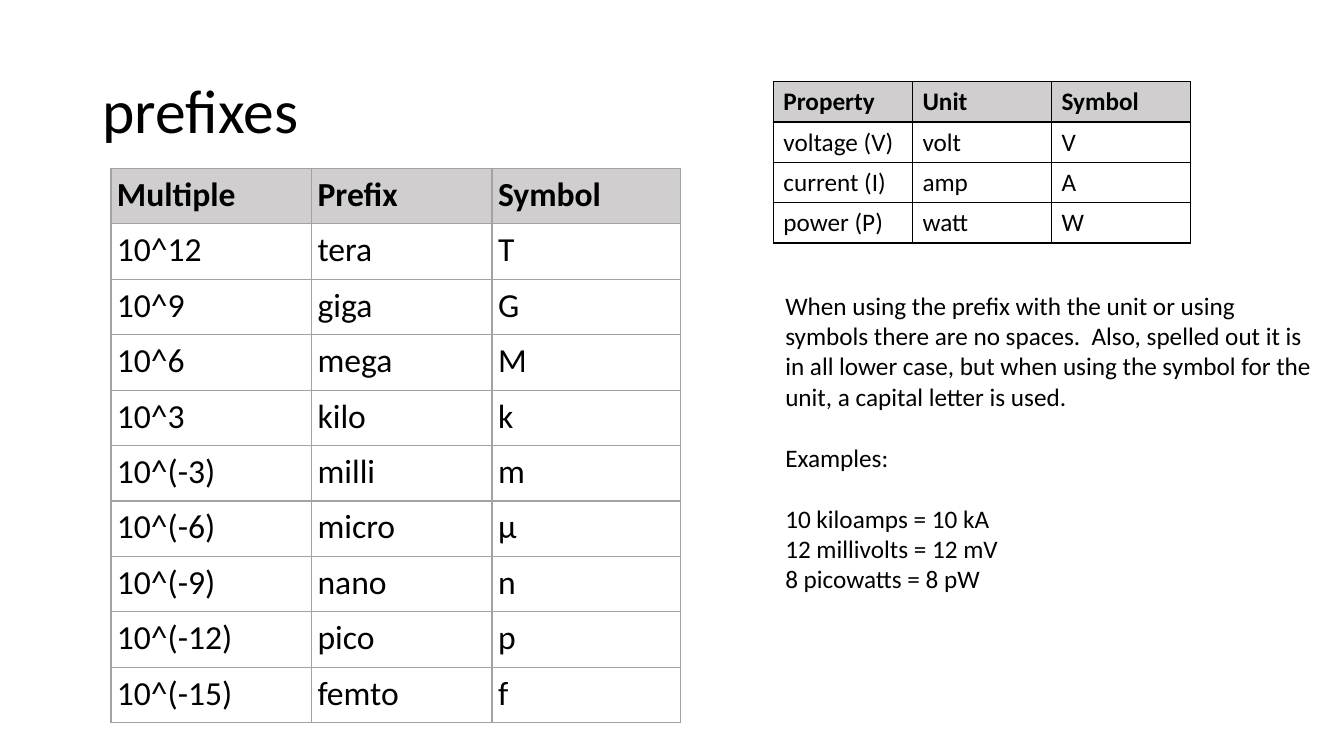
from lxml import etree
from pptx import Presentation
from pptx.dml.color import RGBColor
from pptx.enum.text import MSO_ANCHOR
from pptx.oxml.ns import qn
from pptx.util import Inches, Pt

MIDDLE = MSO_ANCHOR.MIDDLE
TOP = MSO_ANCHOR.TOP

COLORS = {"text": "000000", "header": "D0CECE", "gray": "A3A3A3", "black": "000000"}

PREFIXES = [
    ("Multiple", "Prefix", "Symbol"),
    ("10^12", "tera", "T"),
    ("10^9", "giga", "G"),
    ("10^6", "mega", "M"),
    ("10^3", "kilo", "k"),
    ("10^(-3)", "milli", "m"),
    ("10^(-6)", "micro", "µ"),
    ("10^(-9)", "nano", "n"),
    ("10^(-12)", "pico", "p"),
    ("10^(-15)", "femto", "f"),
]

UNITS = [
    ("Property", "Unit", "Symbol"),
    ("voltage (V)", "volt", "V"),
    ("current (I)", "amp", "A"),
    ("power (P)", "watt", "W"),
]

RULE = (
    "When using the prefix with the unit or using symbols there are no spaces.  "
    "Also, spelled out it is in all lower case, but when using the symbol for the "
    "unit, a capital letter is used."
)
NOTES = [
    (RULE, 22),
    ("Examples:", 22),
    ("10 kiloamps = 10 kA", 0),
    ("12 millivolts = 12 mV", 0),
    ("8 picowatts = 8 pW", 0),
]


class SlideWriter:
    """Draws text and tables on one slide in a shared style."""

    def __init__(self, page, font="Calibri"):
        self.page = page
        self.font = font

    def add_span(self, para, text, size, bold=False):
        span = para.add_run()
        span.text = text
        span.font.name = self.font
        span.font.size = Pt(size)
        span.font.bold = bold
        span.font.color.rgb = RGBColor.from_string(COLORS["text"])

    def add_text(self, left, top, width, height, lines, size, anchor=TOP, spacing=1.0):
        box = self.page.shapes.add_textbox(
            Inches(left), Inches(top), Inches(width), Inches(height)
        )
        frame = box.text_frame
        frame.word_wrap = True
        frame.vertical_anchor = anchor
        for index, (text, gap) in enumerate(lines):
            para = frame.add_paragraph() if index else frame.paragraphs[0]
            para.line_spacing = spacing
            para.space_after = Pt(gap)
            self.add_span(para, text, size)

    def add_borders(self, cell, color):
        properties = cell._tc.get_or_add_tcPr()
        for side in ("a:lnL", "a:lnR", "a:lnT", "a:lnB"):
            line = etree.SubElement(properties, qn(side), w=str(Pt(1)))
            fill = etree.SubElement(line, qn("a:solidFill"))
            etree.SubElement(fill, qn("a:srgbClr"), val=COLORS[color])

    def add_table(self, left, top, widths, row_height, rows, size, border, inset=None):
        table = self.page.shapes.add_table(
            len(rows), len(widths), Inches(left), Inches(top),
            Inches(sum(widths)), Inches(row_height * len(rows)),
        ).table
        table.first_row = False
        table.horz_banding = False
        for column, width in zip(table.columns, widths):
            column.width = Inches(width)
        for row_index, values in enumerate(rows):
            is_header = row_index == 0
            table.rows[row_index].height = Inches(row_height)
            for column_index, text in enumerate(values):
                cell = table.cell(row_index, column_index)
                if inset is not None:
                    cell.margin_left = cell.margin_right = Inches(inset)
                    cell.margin_top = cell.margin_bottom = Inches(inset)
                self.add_borders(cell, border)
                if is_header:
                    cell.fill.solid()
                    cell.fill.fore_color.rgb = RGBColor.from_string(COLORS["header"])
                else:
                    cell.fill.background()
                self.add_span(cell.text_frame.paragraphs[0], text, size, is_header)


def main():
    deck = Presentation()
    deck.slide_width = Inches(13.33)
    deck.slide_height = Inches(7.5)
    writer = SlideWriter(deck.slides.add_slide(deck.slide_layouts[6]))
    writer.add_text(0.92, 0.4, 11.5, 1.45, [("prefixes", 0)], 44, MIDDLE, 0.9)
    writer.add_table(1.1, 1.67, (1.99, 1.79, 1.87), 0.55, PREFIXES, 24, "gray", 0.06)
    writer.add_table(7.67, 0.81, (1.38,) * 3, 0.4, UNITS, 18, "black")
    writer.add_text(7.69, 2.83, 5.42, 3.13, NOTES, 18)
    deck.save("out.pptx")


if __name__ == "__main__":
    main()
